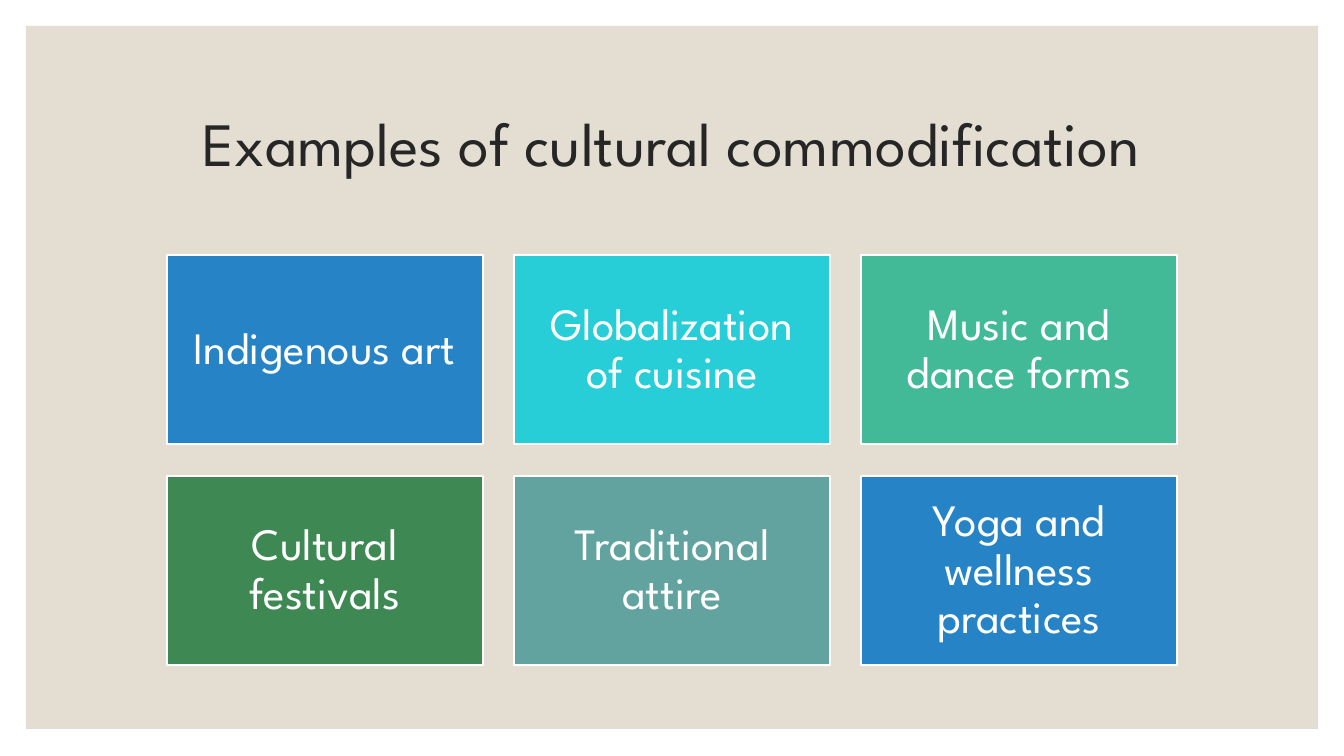
from dataclasses import dataclass

from pptx import Presentation
from pptx.dml.color import RGBColor
from pptx.enum.shapes import MSO_SHAPE
from pptx.enum.text import MSO_ANCHOR, PP_ALIGN
from pptx.slide import Slide
from pptx.text.text import TextFrame
from pptx.util import Pt

RECTANGLE = MSO_SHAPE.RECTANGLE
MIDDLE = MSO_ANCHOR.MIDDLE
CENTER = PP_ALIGN.CENTER

SLIDE_WIDTH, SLIDE_HEIGHT = 960, 540
COLUMNS = 3
CARD_WIDTH, CARD_HEIGHT = 225.4, 135.24
CARD_GAP = CARD_WIDTH / 10
CARDS_LEFT = (SLIDE_WIDTH - COLUMNS * CARD_WIDTH - (COLUMNS - 1) * CARD_GAP) / 2
CARDS_TOP = 182.2


@dataclass(frozen=True)
class Theme:
    font: str = "League Spartan"
    title_size: float = 44
    card_size: float = 32
    line_spacing: float = 0.9
    border_width: float = 1.5
    panel: str = "E3DED1"
    title: str = "262626"
    white: str = "FFFFFF"
    blue: str = "2683C6"
    cyan: str = "27CED7"
    mint: str = "42BA97"
    green: str = "3E8853"
    teal: str = "62A39F"


@dataclass(frozen=True)
class Box:
    left: float
    top: float
    width: float
    height: float


@dataclass(frozen=True)
class Card:
    label: str
    fill: str


THEME = Theme()
CARDS = (
    Card("Indigenous art", THEME.blue),
    Card("Globalization of cuisine", THEME.cyan),
    Card("Music and dance forms", THEME.mint),
    Card("Cultural festivals", THEME.green),
    Card("Traditional attire", THEME.teal),
    Card("Yoga and wellness practices", THEME.blue),
)


def write_text(frame: TextFrame, text: str, size: float, color: str, margins: tuple[float, float]) -> None:
    frame.word_wrap = True
    frame.vertical_anchor = MIDDLE
    frame.margin_left = frame.margin_right = Pt(margins[0])
    frame.margin_top = frame.margin_bottom = Pt(margins[1])
    paragraph = frame.paragraphs[0]
    paragraph.alignment = CENTER
    paragraph.line_spacing = THEME.line_spacing
    run = paragraph.add_run()
    run.text = text
    run.font.name = THEME.font
    run.font.size = Pt(size)
    run.font.color.rgb = RGBColor.from_string(color)


def add_rectangle(slide: Slide, box: Box, fill: str, border: str | None = None) -> TextFrame:
    shape = slide.shapes.add_shape(RECTANGLE, Pt(box.left), Pt(box.top), Pt(box.width), Pt(box.height))
    shape.shadow.inherit = False
    shape.fill.solid()
    shape.fill.fore_color.rgb = RGBColor.from_string(fill)
    if border is None:
        shape.line.fill.background()
    else:
        shape.line.color.rgb = RGBColor.from_string(border)
        shape.line.width = Pt(THEME.border_width)
    return shape.text_frame


def add_title(slide: Slide, box: Box, text: str) -> None:
    shape = slide.shapes.add_textbox(Pt(box.left), Pt(box.top), Pt(box.width), Pt(box.height))
    write_text(shape.text_frame, text, THEME.title_size, THEME.title, (7.2, 3.6))


def add_card(slide: Slide, card: Card, index: int) -> None:
    row, column = divmod(index, COLUMNS)
    box = Box(
        CARDS_LEFT + column * (CARD_WIDTH + CARD_GAP),
        CARDS_TOP + row * (CARD_HEIGHT + CARD_GAP),
        CARD_WIDTH,
        CARD_HEIGHT,
    )
    frame = add_rectangle(slide, box, card.fill, THEME.white)
    write_text(frame, card.label, THEME.card_size, THEME.white, (9.6, 9.6))


def main() -> None:
    presentation = Presentation()
    presentation.slide_width = Pt(SLIDE_WIDTH)
    presentation.slide_height = Pt(SLIDE_HEIGHT)
    slide = presentation.slides.add_slide(presentation.slide_layouts[6])
    slide.background.fill.solid()
    slide.background.fill.fore_color.rgb = RGBColor.from_string(THEME.white)
    add_rectangle(slide, Box(18.5, 18.5, 923, 502.2), THEME.panel)
    add_title(slide, Box(84, 50.4, 792, 108), "Examples of cultural commodification")
    for index, card in enumerate(CARDS):
        add_card(slide, card, index)
    presentation.save("out.pptx")


if __name__ == "__main__":
    main()
